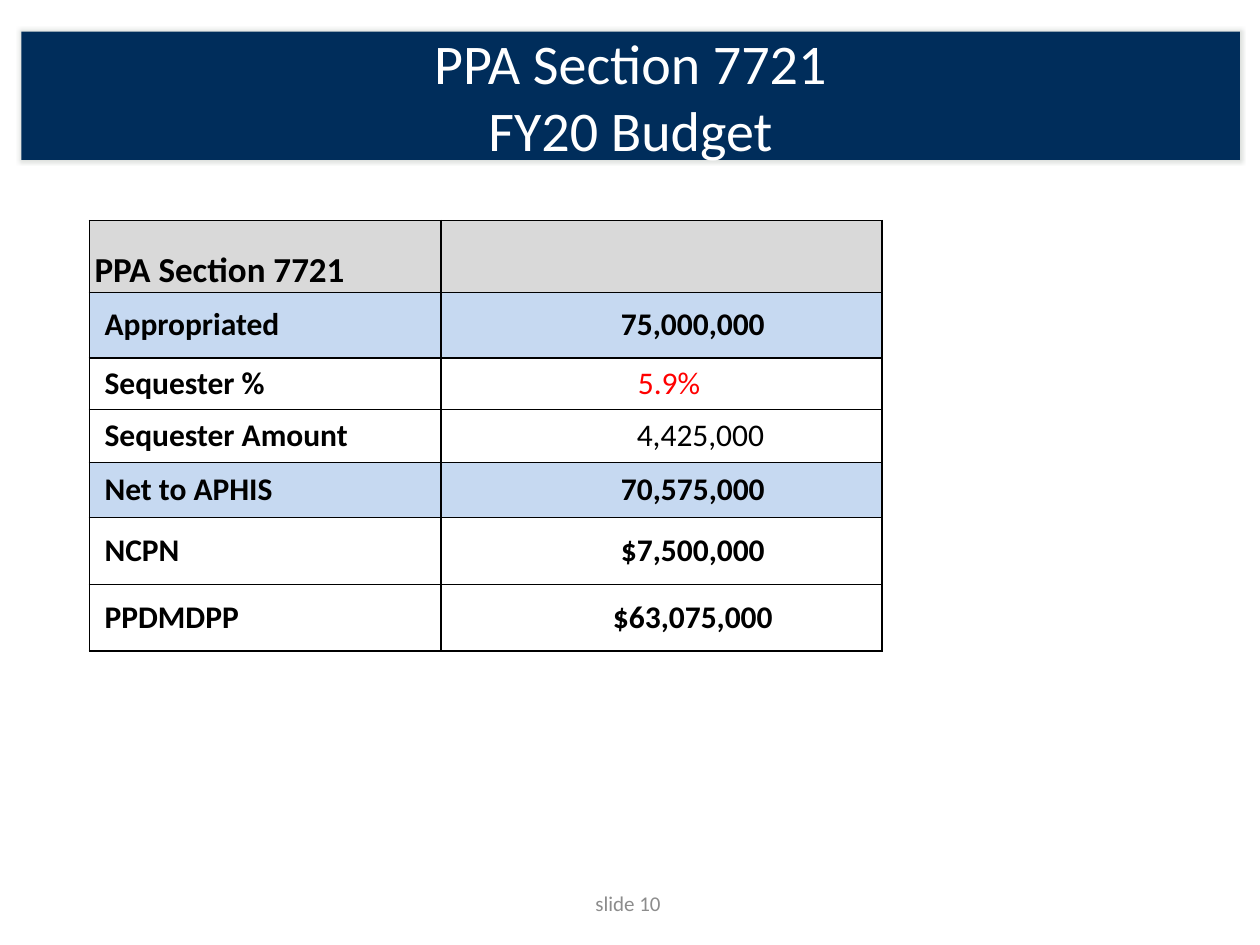
from lxml import etree
from pptx import Presentation
from pptx.dml.color import RGBColor
from pptx.enum.text import MSO_ANCHOR, MSO_AUTO_SIZE, PP_ALIGN
from pptx.oxml import parse_xml
from pptx.oxml.ns import qn
from pptx.util import Inches, Pt

LEFT, CENTER = PP_ALIGN.LEFT, PP_ALIGN.CENTER
MIDDLE, BOTTOM = MSO_ANCHOR.MIDDLE, MSO_ANCHOR.BOTTOM
NO_AUTOFIT = MSO_AUTO_SIZE.NONE
DRAWING_NS = "http://schemas.openxmlformats.org/drawingml/2006/main"

THEME = {
    "font": "Calibri",
    "navy": "002D5B", "white": "FFFFFF", "black": "000000", "red": "FF0000",
    "header": "D9D9D9", "total": "C6D9F1", "footer": "8C8C8C", "glow": "C8CDC8",
    "title_size": 32, "header_size": 20, "body_size": 18, "footer_size": 12,
    "border_width": 1,
}

TITLE = "PPA Section 7721\vFY20 Budget"
FOOTER = "slide 10"
HEADING = "PPA Section 7721"
BUDGET = [
    ("Appropriated", "75,000,000", 0.52, "total", {}),
    ("Sequester %", "5.9%", 0.41, "white", {"bold": False, "color": "red", "indent": 0.12}),
    ("Sequester Amount", "4,425,000", 0.42, "white", {"bold": False, "indent": 0.62}),
    ("Net to APHIS", "70,575,000", 0.44, "total", {}),
    ("NCPN", "$7,500,000", 0.53, None, {}),
    ("PPDMDPP", "$63,075,000", 0.53, None, {}),
]
HEADER_HEIGHT = 0.57
COLUMN_WIDTHS = (2.79, 3.5)
LABEL_INDENT, VALUE_INDENT, HEADING_INDENT = 0.12, 0.5, 0.04


def rgb(name):
    return RGBColor.from_string(THEME[name])


def write(frame, text, size, color="black", bold=False, align=LEFT, indent=0):
    frame.text = text
    paragraph = frame.paragraphs[0]
    paragraph.alignment = align
    if indent:
        paragraph._p.get_or_add_pPr().set("marL", str(Inches(indent)))
    styles = {"name": THEME["font"], "size": Pt(THEME[size]), "bold": bold}
    for run in paragraph.runs:
        for key, value in styles.items():
            setattr(run.font, key, value)
        run.font.color.rgb = rgb(color)


def set_frame(frame, anchor=MIDDLE):
    settings = {"word_wrap": True, "auto_size": NO_AUTOFIT, "vertical_anchor": anchor}
    for key, value in settings.items():
        setattr(frame, key, value)


def place(shape, left, top, width, height):
    box = {"left": left, "top": top, "width": width, "height": height}
    for key, value in box.items():
        setattr(shape, key, Inches(value))


def add_glow(shape):
    shape._element.spPr.append(parse_xml(
        f'<a:effectLst xmlns:a="{DRAWING_NS}"><a:glow rad="38100">'
        f'<a:srgbClr val="{THEME["glow"]}"><a:alpha val="60000"/></a:srgbClr>'
        '</a:glow></a:effectLst>'))


def format_cell(cell, fill, anchor):
    margins = dict.fromkeys(
        ("margin_left", "margin_right", "margin_top", "margin_bottom"), 0)
    for key, value in {**margins, "vertical_anchor": anchor}.items():
        setattr(cell, key, value)
    properties = cell._tc.get_or_add_tcPr()
    for side in ("lnL", "lnR", "lnT", "lnB"):
        border = etree.SubElement(properties, qn(f"a:{side}"),
                                  w=str(Pt(THEME["border_width"])))
        solid = etree.SubElement(border, qn("a:solidFill"))
        etree.SubElement(solid, qn("a:srgbClr"), val=THEME["black"])
    if fill:
        cell.fill.solid()
        cell.fill.fore_color.rgb = rgb(fill)
    else:
        cell.fill.background()


def add_title(slide):
    title = slide.shapes.title
    place(title, 0.17, 0.25, 9.67, 1.02)
    title.fill.solid()
    title.fill.fore_color.rgb = rgb("navy")
    add_glow(title)
    set_frame(title.text_frame)
    write(title.text_frame, TITLE, "title_size", "white", align=CENTER)


def add_budget(slide):
    heights = [HEADER_HEIGHT] + [row[2] for row in BUDGET]
    table = slide.shapes.add_table(
        len(heights), len(COLUMN_WIDTHS), Inches(0.71), Inches(1.75),
        Inches(sum(COLUMN_WIDTHS)), Inches(sum(heights))).table
    table.first_row = table.horz_banding = False
    for column, width in zip(table.columns, COLUMN_WIDTHS):
        column.width = Inches(width)
    for row, height in zip(table.rows, heights):
        row.height = Inches(height)

    for cell in table.rows[0].cells:
        format_cell(cell, "header", BOTTOM)
    write(table.cell(0, 0).text_frame, HEADING, "header_size", bold=True,
          indent=HEADING_INDENT)

    for index, (label, amount, _, fill, changes) in enumerate(BUDGET, 1):
        label_cell, amount_cell = table.rows[index].cells
        for cell in (label_cell, amount_cell):
            format_cell(cell, fill, MIDDLE)
        write(label_cell.text_frame, label, "body_size", bold=True, indent=LABEL_INDENT)
        amount_style = {"bold": True, "align": CENTER, "indent": VALUE_INDENT, **changes}
        write(amount_cell.text_frame, amount, "body_size", **amount_style)


def add_footer(slide):
    footer = slide.shapes.add_textbox(
        Inches(3.82), Inches(6.97), Inches(2.33), Inches(0.4))
    set_frame(footer.text_frame)
    write(footer.text_frame, FOOTER, "footer_size", "footer", align=CENTER)


def main():
    deck = Presentation()
    deck.slide_width, deck.slide_height = Inches(10), Inches(7.5)
    slide = deck.slides.add_slide(deck.slide_layouts.get_by_name("Title Only"))
    add_title(slide)
    add_budget(slide)
    add_footer(slide)
    deck.save("out.pptx")


if __name__ == "__main__":
    main()
